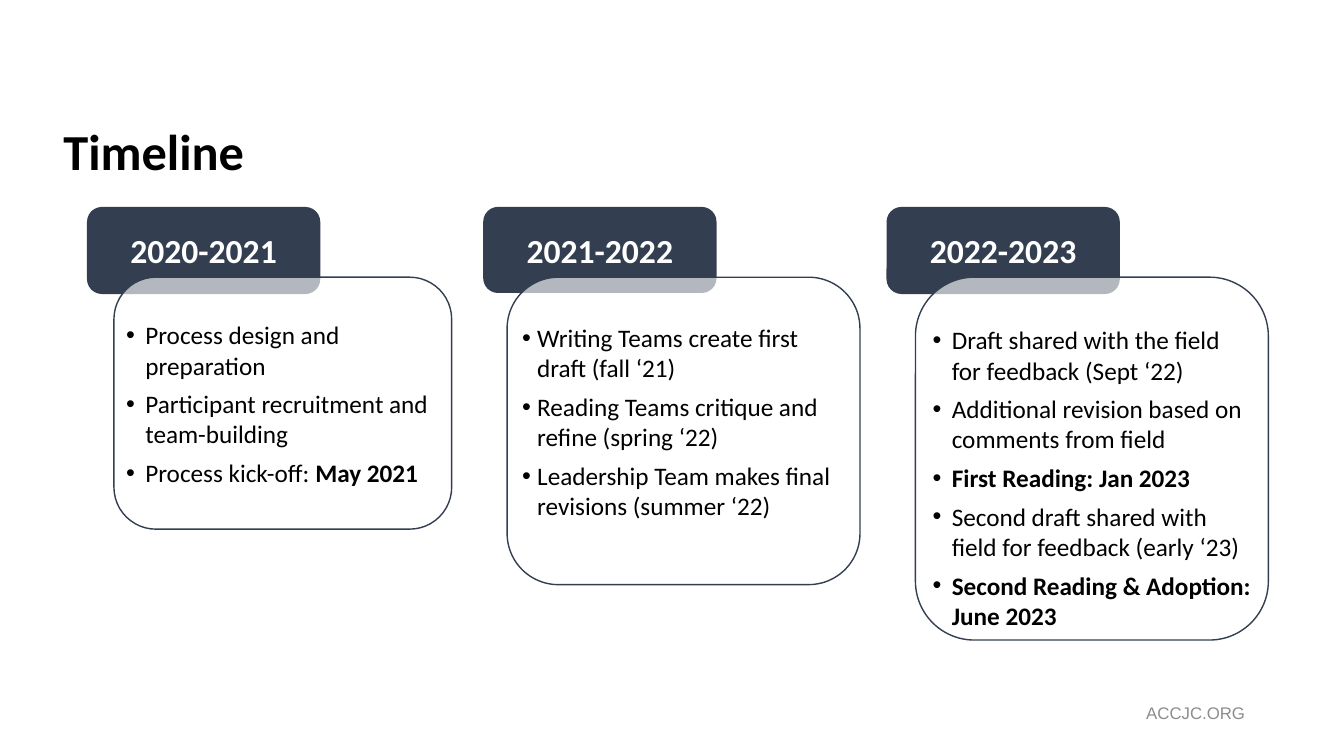
from lxml import etree
from pptx import Presentation
from pptx.dml.color import RGBColor
from pptx.enum.shapes import MSO_SHAPE
from pptx.enum.text import MSO_ANCHOR, PP_ALIGN
from pptx.oxml.ns import qn
from pptx.util import Pt

PX = 9144  # EMU per px, 100 px to the inch
NAVY = RGBColor(0x33, 0x3F, 0x50)
WHITE = RGBColor(0xFF, 0xFF, 0xFF)
BLACK = RGBColor(0x00, 0x00, 0x00)
GREY = RGBColor(0x8C, 0x8C, 0x8C)
ROUNDED = MSO_SHAPE.ROUNDED_RECTANGLE
LEFT, CENTER, RIGHT = PP_ALIGN.LEFT, PP_ALIGN.CENTER, PP_ALIGN.RIGHT
TOP, MIDDLE = MSO_ANCHOR.TOP, MSO_ANCHOR.MIDDLE
CARD_OPACITY = "63000"


def write(box, paragraphs, size, color=BLACK, font="Calibri", bold=False, align=LEFT,
          anchor=MIDDLE, insets=(10, 5, 10, 5), indent=0, spacing=None):
    """Each paragraph is a list of spans; a span starting with * is bold."""
    frame = box.text_frame
    frame.word_wrap = True
    frame.vertical_anchor = anchor
    (frame.margin_left, frame.margin_top,
     frame.margin_right, frame.margin_bottom) = (inset * PX for inset in insets)
    for number, spans in enumerate(paragraphs):
        para = frame.add_paragraph() if number else frame.paragraphs[0]
        para.alignment = align
        if spacing:
            para.line_spacing = spacing
        if indent:
            props = para._p.get_or_add_pPr()
            props.set("marL", str(indent * PX))
            props.set("indent", str(-indent * PX))
            para.space_before = Pt(6 if number else 0)
            etree.SubElement(props, qn("a:buFont"), typeface="Arial")
            etree.SubElement(props, qn("a:buChar"), char="•")
        for text in spans:
            span = para.add_run()
            span.text = text.removeprefix("*")
            span.font.name = font
            span.font.size = Pt(size)
            span.font.bold = bold or text.startswith("*")
            span.font.color.rgb = color


def add_rounded(left, top, width, height, fill):
    box = page.shapes.add_shape(ROUNDED, left * PX, top * PX, width * PX, height * PX)
    box.shadow.inherit = False
    box.fill.solid()
    box.fill.fore_color.rgb = fill
    box.line.color.rgb = NAVY
    box.line.width = Pt(1)
    return box


deck = Presentation()
deck.slide_width, deck.slide_height = 1333 * PX, 750 * PX
page = deck.slides.add_slide(deck.slide_layouts[6])

footer = page.shapes.add_textbox(1061 * PX, 695 * PX, 181 * PX, 25 * PX)
write(footer, [["ACCJC.ORG"]], 12, color=GREY, font="Arial", align=RIGHT,
      insets=(7, 4, 7, 4))

title = page.shapes.add_textbox(53 * PX, 120 * PX, 1188 * PX, 65 * PX)
write(title, [["Timeline"]], 36, bold=True, spacing=0.9)

# years, tab left, tab height, card left, card width, card height, indent, items
phases = [
    ("2020-2021", 87, 85, 113, 335, 250, 19, [
        ["Process design and preparation"],
        ["Participant recruitment and team-building"],
        ["Process kick-off: ", "*May 2021"],
    ]),
    ("2021-2022", 480, 84, 503, 350, 305, 15, [
        ["Writing Teams create first draft (fall ‘21)"],
        ["Reading Teams critique and refine (spring ‘22)"],
        ["Leadership Team makes final revisions (summer ‘22)"],
    ]),
    ("2022-2023", 880, 85, 908, 350, 360, 19, [
        ["Draft shared with the field for feedback (Sept ‘22)"],
        ["Additional revision based on comments from field"],
        ["*First Reading: Jan 2023"],
        ["Second draft shared with field for feedback (early ‘23)"],
        ["*Second Reading & Adoption: June 2023"],
    ]),
]

for years, tab_left, tab_height, card_left, card_width, card_height, indent, items in phases:
    tab = add_rounded(tab_left, 206, 230, tab_height, NAVY)
    write(tab, [[years]], 24, color=WHITE, bold=True, align=CENTER)

    card = add_rounded(card_left, 275, card_width, card_height, WHITE)
    fill_color = card.fill._xPr.find(qn("a:solidFill"))[0]
    etree.SubElement(fill_color, qn("a:alpha"), val=CARD_OPACITY)
    write(card, items, 18, anchor=TOP, insets=(0, 30, 0, 0), indent=indent)

deck.save("out.pptx")
